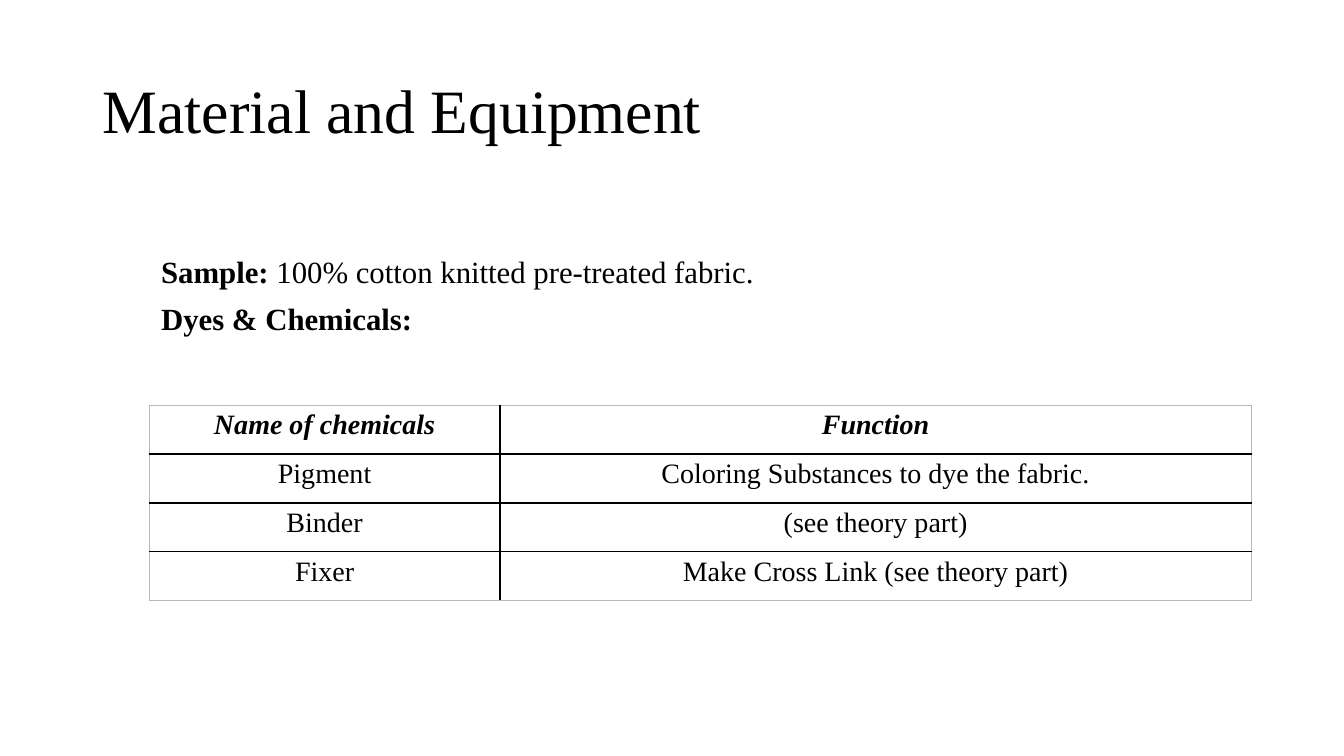
"""Build the Material and Equipment slide."""
from lxml import etree
from pptx import Presentation
from pptx import util as u
from pptx.dml.color import RGBColor
from pptx.enum import text
from pptx.oxml import ns

BLACK = RGBColor(0x00, 0x00, 0x00)
WHITE = RGBColor(0xFF, 0xFF, 0xFF)
GREY = RGBColor(0xB8, 0xB8, 0xB8)


def add_run(p, content, **fmt):
    r = p.add_run()
    r.text = content
    r.font.color.rgb = BLACK
    for name, value in {"name": "Times New Roman", **fmt}.items():
        setattr(r.font, name, value)


def add_border(cell, side, color, width):
    ln = etree.SubElement(cell._tc.get_or_add_tcPr(), ns.qn("a:ln" + side), w=str(u.Pt(width)))
    fill = etree.SubElement(ln, ns.qn("a:solidFill"))
    etree.SubElement(fill, ns.qn("a:srgbClr"), val=str(color))


prs = Presentation()
prs.slide_width, prs.slide_height = u.Inches(13.33), u.Inches(7.5)
s = prs.slides.add_slide(prs.slide_layouts[6])

text_boxes = [
    ((0.92, 0.4, 11.5, 1.45), text.MSO_ANCHOR.MIDDLE, 44,
     [[("Material and Equipment", False)]]),
    ((1.5, 2.5, 10.5, 1), text.MSO_ANCHOR.TOP, 22,
     [[("Sample:", True), (" 100% cotton knitted pre-treated fabric.", False)],
      [("Dyes & Chemicals:", True)]]),
]
for box, anchor, size, paragraphs in text_boxes:
    tf = s.shapes.add_textbox(*map(u.Inches, box)).text_frame
    tf.word_wrap = True
    tf.vertical_anchor = anchor
    for i, runs in enumerate(paragraphs):
        p = tf.add_paragraph() if i else tf.paragraphs[0]
        p.line_spacing = 0.9
        if i:
            p.space_before = u.Pt(10)
        for content, bold in runs:
            add_run(p, content, size=u.Pt(size), bold=bold)

chemicals = [
    ("Name of chemicals", "Function"),
    ("Pigment", "Coloring Substances to dye the fabric."),
    ("Binder", "(see theory part)"),
    ("Fixer", "Make Cross Link (see theory part)"),
]
last_row, last_col = len(chemicals) - 1, len(chemicals[0]) - 1
table = s.shapes.add_table(len(chemicals), len(chemicals[0]), u.Inches(1.48), u.Inches(4.02),
                           u.Inches(10.93), u.Inches(1.94)).table
table.first_row = table.horz_banding = False
for column, width in zip(table.columns, (3.48, 7.45)):
    column.width = u.Inches(width)

cell_format = {"margin_left": u.Inches(0.07), "margin_right": u.Inches(0.07),
               "margin_top": 0, "margin_bottom": 0}
for i, row in enumerate(chemicals):
    for j, content in enumerate(row):
        cell = table.cell(i, j)
        for name, value in cell_format.items():
            setattr(cell, name, value)
        outer = {"L": j == 0, "R": j == last_col, "T": i == 0, "B": i == last_row}
        for side, is_outer in outer.items():
            under_header = (i, side) in ((0, "B"), (1, "T"))
            add_border(cell, side, GREY if is_outer else BLACK,
                       0.5 if is_outer else 1.5 if under_header else 1)
        cell.fill.solid()
        cell.fill.fore_color.rgb = WHITE
        p = cell.text_frame.paragraphs[0]
        p.alignment = text.PP_ALIGN.CENTER
        p.line_spacing = 1.15
        add_run(p, content, size=u.Pt(20), bold=i == 0, italic=i == 0)

prs.save("out.pptx")
